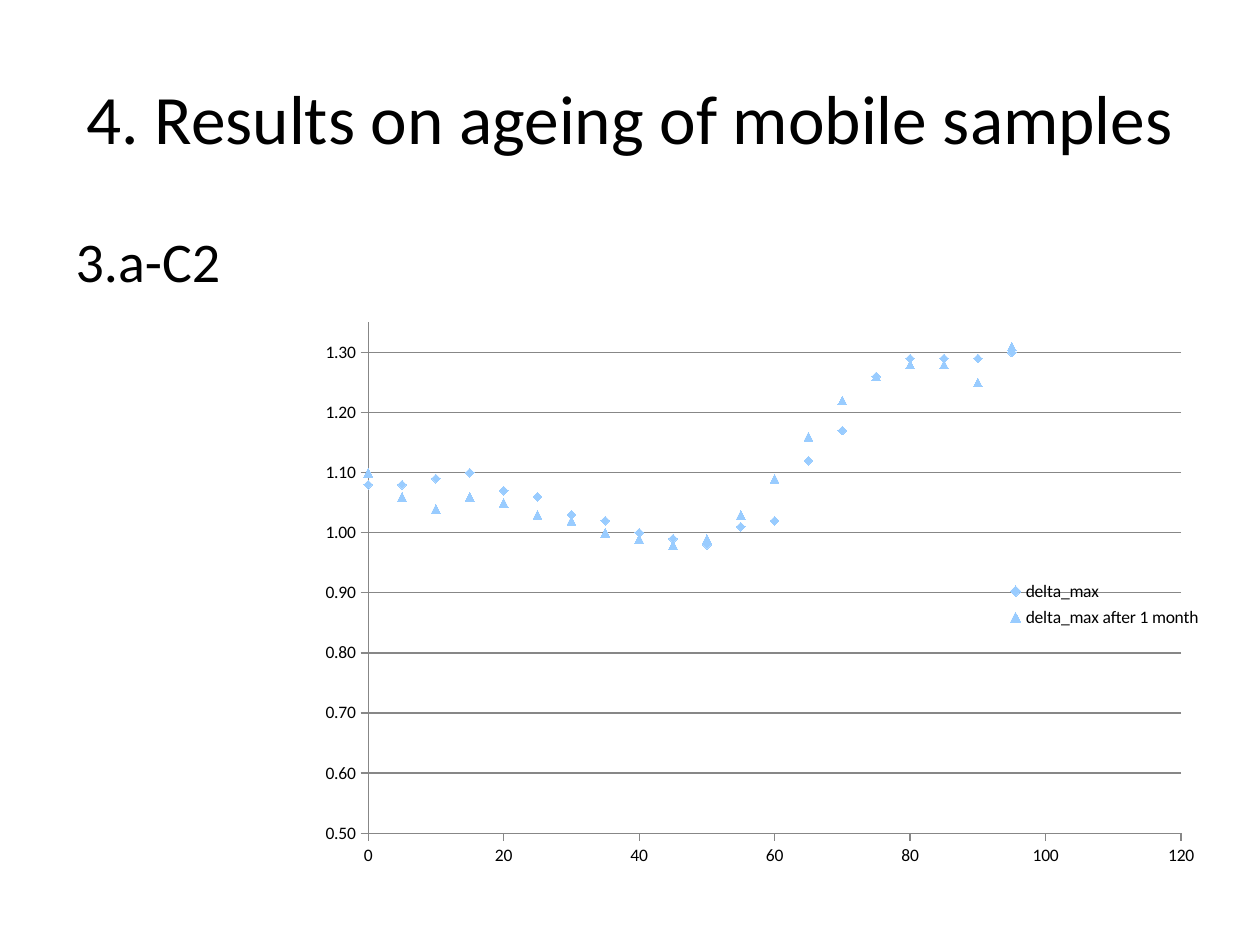
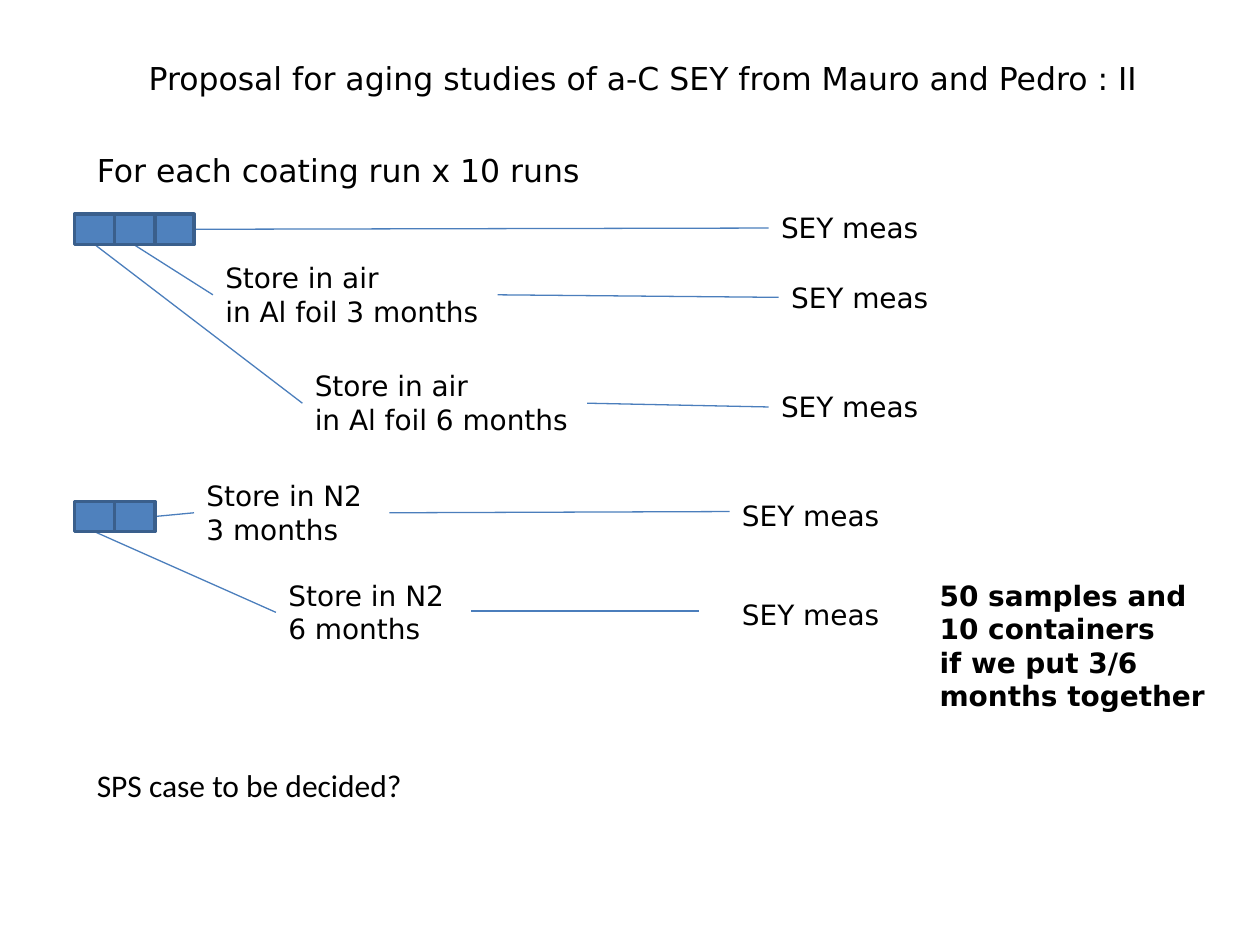
from dataclasses import dataclass
from typing import Any

from lxml.etree import SubElement
from pptx import Presentation
from pptx.chart.data import XyChartData
from pptx.dml.color import RGBColor
from pptx.enum.chart import XL_CHART_TYPE, XL_LEGEND_POSITION, XL_MARKER_STYLE, XL_TICK_MARK
from pptx.enum.shapes import MSO_CONNECTOR, MSO_SHAPE
from pptx.enum.text import MSO_ANCHOR, MSO_AUTO_SIZE, PP_ALIGN
from pptx.oxml.ns import qn
from pptx.util import Emu, Pt

PX = 9144


@dataclass(frozen=True)
class Theme:
    """Colours, fonts and type sizes shared by the slides."""
    text: RGBColor = RGBColor(0, 0, 0)
    sample: RGBColor = RGBColor(0x4F, 0x81, 0xBD)
    edge: RGBColor = RGBColor(0x3A, 0x5F, 0x8C)
    link: RGBColor = RGBColor(0x4B, 0x7E, 0xBC)
    marker: RGBColor = RGBColor(0x99, 0xCC, 0xFF)
    grid: RGBColor = RGBColor(0x87, 0x87, 0x87)
    main_font: str = "Calibri"
    plan_font: str = "DejaVu Sans"
    title: float = 39.6
    body: float = 32
    heading: float = 18
    label: float = 16
    chart: float = 10


@dataclass(frozen=True)
class Box:
    """A rectangle in px."""
    x: int
    y: int
    w: int
    h: int

    def emu(self) -> tuple[Emu, ...]:
        """Return left, top, width and height in EMU."""
        return tuple(Emu(v * PX) for v in (self.x, self.y, self.w, self.h))


@dataclass(frozen=True)
class Label:
    """A text with its box and type."""
    text: str
    box: Box
    size: float
    font: str
    bold: bool = False
    wrap: bool = False


@dataclass(frozen=True)
class Link:
    """A straight line between two points in px."""
    x1: int
    y1: int
    x2: int
    y2: int


@dataclass(frozen=True)
class Series:
    """A measured series of the scatter chart."""
    name: str
    values: tuple[float, ...]
    marker: XL_MARKER_STYLE


T = Theme()
AGES = range(0, 100, 5)
SERIES = (
    Series("delta_max",
           (1.08, 1.08, 1.09, 1.1, 1.07, 1.06, 1.03, 1.02, 1, 0.99,
            0.98, 1.01, 1.02, 1.12, 1.17, 1.26, 1.29, 1.29, 1.29, 1.3),
           XL_MARKER_STYLE.DIAMOND),
    Series("delta_max after 1 month",
           (1.1, 1.06, 1.04, 1.06, 1.05, 1.03, 1.02, 1, 0.99, 0.98,
            0.99, 1.03, 1.09, 1.16, 1.22, 1.26, 1.28, 1.28, 1.25, 1.31),
           XL_MARKER_STYLE.TRIANGLE),
)
PLAN_TITLE = Label("Proposal for aging studies of a-C SEY from Mauro and Pedro : II",
                   Box(108, 42, 835, 40), T.heading, T.plan_font)
NOTES = (
    Label("For each coating run x 10 runs", Box(67, 115, 411, 40), T.heading, T.plan_font),
    Label("50 samples and\n10 containers\nif we put 3/6 months together",
          Box(736, 454, 236, 118), T.label, T.plan_font, bold=True, wrap=True),
    Label("SPS case to be decided?", Box(67, 603, 303, 40), T.heading, T.main_font),
)
STORAGE = (
    ("Store in air\nin Al foil 3 months", Box(169, 202, 226, 64)),
    ("Store in air\nin Al foil 6 months", Box(240, 288, 226, 64)),
    ("Store in N2\n3 months", Box(154, 375, 156, 64)),
    ("Store in N2\n6 months", Box(219, 454, 148, 64)),
)
MEASUREMENTS = ((610, 162), (618, 218), (610, 304), (579, 391), (579, 469))
SAMPLE_ROWS = ((170, 3), (398, 2))
LINKS = (
    Link(153, 182, 610, 181), Link(106, 194, 169, 234), Link(75, 194, 240, 320),
    Link(395, 234, 618, 236), Link(466, 320, 610, 323), Link(122, 410, 154, 407),
    Link(75, 422, 219, 486), Link(309, 407, 579, 406), Link(374, 485, 555, 485),
)


def apply(obj: Any, values: dict[str, Any]) -> None:
    """Set each named attribute of an object."""
    for name, value in values.items():
        setattr(obj, name, value)


def set_font(font: Any, name: str, size: float, bold: bool = False) -> None:
    """Format a font in the text colour."""
    apply(font, {"name": name, "size": Pt(size), "bold": bold})
    font.color.rgb = T.text


def place(sp: Any, box: Box) -> None:
    """Move and size a shape."""
    apply(sp, dict(zip(("left", "top", "width", "height"), box.emu())))


def write(sp: Any, label: Label, align: PP_ALIGN = PP_ALIGN.LEFT,
          anchor: MSO_ANCHOR = MSO_ANCHOR.TOP) -> None:
    """Place a label in a text shape and format it."""
    place(sp, label.box)
    tf = sp.text_frame
    tf.text = label.text
    apply(tf, {"word_wrap": label.wrap, "vertical_anchor": anchor,
               "auto_size": MSO_AUTO_SIZE.NONE})
    for p in tf.paragraphs:
        p.alignment = align
        for r in p.runs:
            set_font(r.font, label.font, label.size, label.bold)


def add_label(s: Any, label: Label) -> None:
    """Add a text box that grows with its text."""
    sp = s.shapes.add_textbox(*label.box.emu())
    write(sp, label)
    sp.text_frame.auto_size = MSO_AUTO_SIZE.SHAPE_TO_FIT_TEXT


def add_sample(s: Any, box: Box) -> None:
    """Add one coated sample."""
    sp = s.shapes.add_shape(MSO_SHAPE.RECTANGLE, *box.emu())
    sp.shadow.inherit = False
    sp.fill.solid()
    sp.fill.fore_color.rgb = T.sample
    set_line(sp.line, T.edge, 2)


def set_line(line: Any, color: RGBColor, width: float) -> None:
    """Give a line its colour and width."""
    line.color.rgb = color
    line.width = Pt(width)


def add_link(s: Any, link: Link) -> None:
    """Add a thin line without shadow."""
    ends = (link.x1, link.y1, link.x2, link.y2)
    sp = s.shapes.add_connector(MSO_CONNECTOR.STRAIGHT, *(Emu(v * PX) for v in ends))
    set_line(sp.line, T.link, 0.75)
    SubElement(sp._element.spPr, qn("a:effectLst"))


def set_layout(parent: Any, values: dict[str, Any]) -> None:
    """Fix the place of a chart part as fractions of the chart."""
    for old in parent.findall(qn("c:layout")):
        parent.remove(old)
    layout = parent.makeelement(qn("c:layout"))
    manual = SubElement(layout, qn("c:manualLayout"))
    for name, value in values.items():
        SubElement(manual, qn(f"c:{name}")).set("val", str(value))
    before = parent.find(qn("c:legendPos"))
    parent.insert(0 if before is None else parent.index(before) + 1, layout)


def add_ageing_chart(s: Any, box: Box) -> None:
    """Add the scatter chart of ageing results."""
    data = XyChartData(number_format="0.00")
    for series in SERIES:
        xy = data.add_series(series.name)
        for age, value in zip(AGES, series.values):
            xy.add_data_point(age, value)
    chart = s.shapes.add_chart(XL_CHART_TYPE.XY_SCATTER, *box.emu(), data).chart
    apply(chart, {"has_title": False, "has_legend": True})
    set_font(chart.font, T.main_font, T.chart)
    chart.plots[0].vary_by_categories = False
    apply(chart.legend, {"position": XL_LEGEND_POSITION.RIGHT, "include_in_layout": True})
    set_layout(chart.legend._element,
               {"xMode": "edge", "yMode": "edge", "x": 0.77, "y": 0.46, "w": 0.23, "h": 0.1})
    set_layout(chart._chartSpace.chart.plotArea,
               {"layoutTarget": "inner", "xMode": "edge", "yMode": "edge",
                "x": 0.07, "y": 0.03, "w": 0.9, "h": 0.87})
    axes = ((chart.category_axis, 0, 120, 20, "0", False),
            (chart.value_axis, 0.5, 1.35, 0.1, "0.00", True))
    for axis, low, high, step, number_format, grid in axes:
        apply(axis, {"minimum_scale": low, "maximum_scale": high, "major_unit": step,
                     "has_major_gridlines": grid, "major_tick_mark": XL_TICK_MARK.OUTSIDE,
                     "minor_tick_mark": XL_TICK_MARK.NONE})
        apply(axis.tick_labels, {"number_format": number_format,
                                 "number_format_is_linked": False})
        set_line(axis.format.line, T.grid, 0.75)
    set_line(chart.value_axis.major_gridlines.format.line, T.grid, 0.75)
    for xy, series in zip(chart.plots[0].series, SERIES):
        xy.smooth = False
        xy.format.line.fill.background()
        apply(xy.marker, {"style": series.marker, "size": 5})
        xy.marker.format.fill.solid()
        xy.marker.format.fill.fore_color.rgb = T.marker
        xy.marker.format.line.fill.background()


def results_slide(prs: Any) -> None:
    """Build the slide with ageing results."""
    s = prs.slides.add_slide(prs.slide_layouts[1])
    write(s.shapes.title, Label("4. Results on ageing of mobile samples", Box(50, 30, 900, 125),
                                T.title, T.main_font, wrap=True),
          PP_ALIGN.CENTER, MSO_ANCHOR.MIDDLE)
    body = s.placeholders[1]
    write(body, Label("3.a-C2", Box(50, 175, 900, 495), T.body, T.main_font, wrap=True))
    pPr = body.text_frame.paragraphs[0]._p.get_or_add_pPr()
    for name, value in {"marL": 38 * PX, "indent": -38 * PX}.items():
        pPr.set(name, str(value))
    SubElement(pPr, qn("a:buNone"))
    add_ageing_chart(s, Box(242, 242, 717, 466))


def proposal_slide(prs: Any) -> None:
    """Build the slide with the storage and measurement plan."""
    s = prs.slides.add_slide(prs.slide_layouts[5])
    write(s.shapes.title, PLAN_TITLE)
    for link in LINKS:
        add_link(s, link)
    for top, count in SAMPLE_ROWS:
        for i in reversed(range(count)):
            add_sample(s, Box(59 + round(i * 31.5), top, 32, 24))
    for text, box in STORAGE:
        add_label(s, Label(text, box, T.label, T.plan_font))
    for x, y in MEASUREMENTS:
        add_label(s, Label("SEY meas", Box(x, y, 132, 37), T.label, T.plan_font))
    for note in NOTES:
        add_label(s, note)


def main() -> None:
    """Build and save the presentation."""
    prs = Presentation()
    apply(prs, {"slide_width": Emu(1000 * PX), "slide_height": Emu(750 * PX)})
    results_slide(prs)
    proposal_slide(prs)
    prs.save("out.pptx")


if __name__ == "__main__":
    main()
